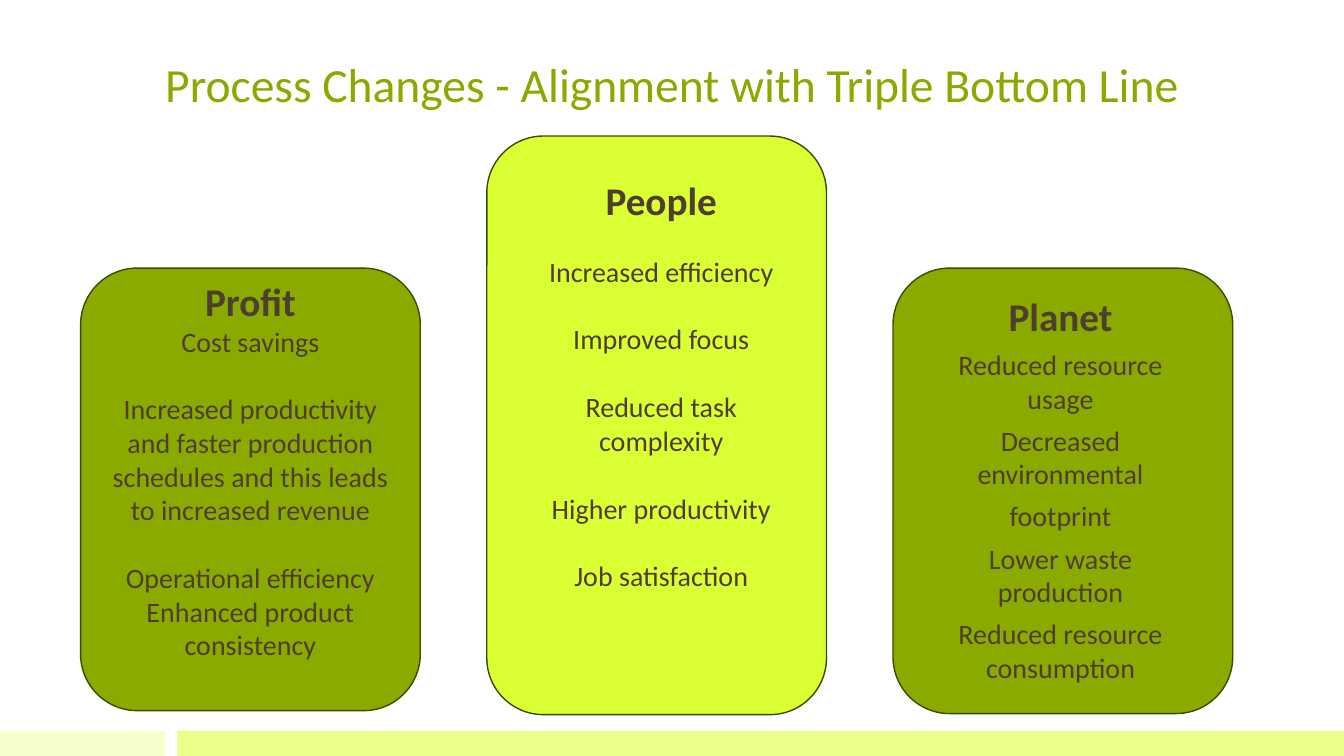
from pptx import Presentation
from pptx.dml.color import RGBColor
from pptx.enum.shapes import MSO_SHAPE
from pptx.enum.text import MSO_ANCHOR, PP_ALIGN
from pptx.util import Pt

RECTANGLE = MSO_SHAPE.RECTANGLE
ROUNDED = MSO_SHAPE.ROUNDED_RECTANGLE
CENTER = PP_ALIGN.CENTER
TOP = MSO_ANCHOR.TOP
BOTTOM = MSO_ANCHOR.BOTTOM

PAGE_WIDTH, PAGE_HEIGHT = 960, 540
BAR_TOP = 522
CARD_LEFT, CARD_PITCH, CARD_WIDTH = 57.6, 290.16, 242.64
OLIVE, LIME, OUTLINE, BROWN = "8BAA00", "DAFF33", "3D4B00", "4D3E2F"
LINE_GAP = 24.4  # height of one 20 pt line

BARS = [(0, 118.08, "F6FFCC"), (126.72, PAGE_WIDTH - 126.72, "E9FF88")]

# Each card: top, height, fill, text area (left, top, width, height),
# heading, and items as (space before, text)
CARDS = [
    (191.5, 316.1, OLIVE, (73.4, 194.4, 211, 329.8), "Profit", [
        (0, "Cost savings"),
        (LINE_GAP, "Increased productivity and faster production schedules "
                   "and this leads to increased revenue"),
        (LINE_GAP, "Operational efficiency"),
        (0, "Enhanced product consistency"),
    ]),
    (97.2, 413.3, LIME, (380.9, 122.4, 182.9, 326.9), "People", [
        (22, "Increased efficiency"),
        (LINE_GAP, "Improved focus"),
        (LINE_GAP, "Reduced task complexity"),
        (LINE_GAP, "Higher productivity"),
        (LINE_GAP, "Job satisfaction"),
    ]),
    (191.5, 318.2, OLIVE, (657.4, 205.2, 200.2, 304.6), "Planet", [
        (6, "Reduced resource usage"),
        (6, "Decreased environmental"),
        (6, "footprint"),
        (6, "Lower waste production"),
        (6, "Reduced resource consumption"),
    ]),
]


def color(value):
    return RGBColor.from_string(value)


def assign(target, values):
    for name, value in values.items():
        setattr(target, name, value)


class SlideBuilder:
    """Holds the text style and the slide being filled."""

    font_name = "Calibri"

    def __init__(self, page):
        self.page = page

    def panel(self, kind, area, fill, outline=None):
        shape = self.page.shapes.add_shape(kind, *map(Pt, area))
        shape.shadow.inherit = False
        shape.fill.solid()
        shape.fill.fore_color.rgb = color(fill)
        if outline:
            shape.line.color.rgb = color(outline)
            shape.line.width = Pt(1)
        else:
            shape.line.fill.background()

    def text(self, area, lines, ink, anchor=TOP):
        """Add centred lines given as (space before, size, bold, text)."""
        box = self.page.shapes.add_textbox(*map(Pt, area))
        frame = box.text_frame
        assign(frame, {"word_wrap": True, "vertical_anchor": anchor})
        for index, (space, size, bold, words) in enumerate(lines):
            para = frame.add_paragraph() if index else frame.paragraphs[0]
            assign(para, {"alignment": CENTER, "space_before": Pt(space)})
            span = para.add_run()
            span.text = words
            assign(span.font, {"name": self.font_name, "size": Pt(size), "bold": bold})
            span.font.color.rgb = color(ink)

    def card(self, left, top, height, fill, text_area, heading, items):
        self.panel(ROUNDED, (left, top, CARD_WIDTH, height), fill, OUTLINE)
        lines = [(0, 28, True, heading)]
        lines += [(space, 20, False, words) for space, words in items]
        self.text(text_area, lines, BROWN)


def main():
    deck = Presentation()
    assign(deck, {"slide_width": Pt(PAGE_WIDTH), "slide_height": Pt(PAGE_HEIGHT)})
    builder = SlideBuilder(deck.slides.add_slide(deck.slide_layouts[6]))

    for left, width, fill in BARS:
        builder.panel(RECTANGLE, (left, BAR_TOP, width, PAGE_HEIGHT - BAR_TOP), fill)
    title = "Process Changes - Alignment with Triple Bottom Line"
    builder.text((0, 0, PAGE_WIDTH, 83.5), [(0, 34, False, title)], OLIVE, BOTTOM)
    for column, card in enumerate(CARDS):
        builder.card(CARD_LEFT + column * CARD_PITCH, *card)

    deck.save("out.pptx")


if __name__ == "__main__":
    main()
